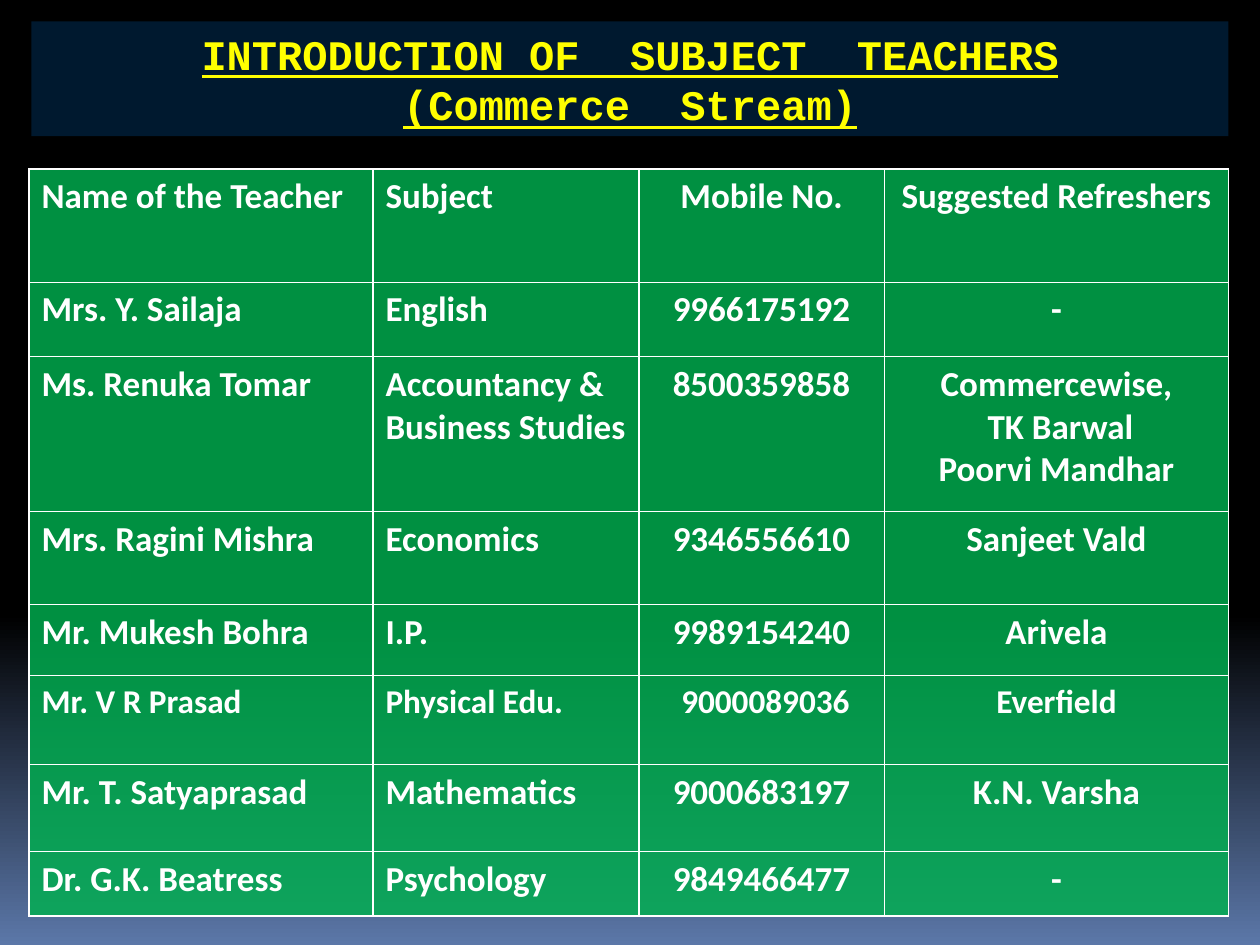
from dataclasses import dataclass

from lxml.etree import SubElement
from pptx import Presentation
from pptx.dml.color import RGBColor
from pptx.enum.shapes import MSO_SHAPE as Shape
from pptx.enum.text import MSO_ANCHOR as Anchor, PP_ALIGN as Align
from pptx.oxml.ns import qn
from pptx.util import Inches, Pt

WHITE = "FFFFFF"
YELLOW = "FFFF00"
NAVY = "00192F"
GREEN = "00B050"
GREEN_OPACITY = 82
COLUMN_WIDTHS = (2.73, 2.11, 1.95, 2.73)
COLUMN_ALIGNMENTS = (Align.LEFT, Align.LEFT, Align.CENTER, Align.CENTER)
TITLE = "INTRODUCTION OF  SUBJECT  TEACHERS\n(Commerce  Stream)"


@dataclass
class TeacherRow:
    height: float
    name: str
    subject: str
    mobile: str
    refreshers: str
    font_size: int = 20


ROWS = (
    TeacherRow(0.9, "Name of the Teacher", "Subject", "Mobile No.", "Suggested Refreshers"),
    TeacherRow(0.59, "Mrs. Y. Sailaja", "English", "9966175192", "-"),
    TeacherRow(1.23, "Ms. Renuka Tomar", "Accountancy & Business Studies", "8500359858",
               "Commercewise,\n TK Barwal\nPoorvi Mandhar"),
    TeacherRow(0.74, "Mrs. Ragini Mishra", "Economics", "9346556610", "Sanjeet Vald"),
    TeacherRow(0.56, "Mr. Mukesh Bohra", "I.P.", "9989154240", "Arivela"),
    TeacherRow(0.71, "Mr. V R Prasad", "Physical Edu.", " 9000089036", "Everfield", 19),
    TeacherRow(0.69, "Mr. T. Satyaprasad", "Mathematics", "9000683197", "K.N. Varsha"),
    TeacherRow(0.51, "Dr. G.K. Beatress", "Psychology", "9849466477", "-"),
)


def color(value: str) -> RGBColor:
    return RGBColor.from_string(value)


def write_text(text_frame, text: str, font_name: str, size: int, font_color: str,
               alignment, underline: bool = False) -> None:
    text_frame.text = text
    for paragraph in text_frame.paragraphs:
        paragraph.alignment = alignment
        font = paragraph.font
        font.name = font_name
        font.size = Pt(size)
        font.bold = True
        font.underline = underline
        font.color.rgb = color(font_color)


def paint_background(slide) -> None:
    fill = slide.background.fill
    fill.gradient()
    fill.gradient_angle = 270
    for stop, (position, value) in zip(fill.gradient_stops, ((0.65, "000000"), (1, "5B77A8"))):
        stop.position = position
        stop.color.rgb = color(value)


def add_title(slide) -> None:
    shape = slide.shapes.add_shape(Shape.RECTANGLE, Inches(0.25), Inches(0.17),
                                   Inches(9.5), Inches(0.91))
    shape.shadow.inherit = False
    shape.fill.solid()
    shape.fill.fore_color.rgb = color(NAVY)
    shape.line.fill.background()
    shape.text_frame.word_wrap = True
    shape.text_frame.vertical_anchor = Anchor.MIDDLE
    write_text(shape.text_frame, TITLE, "Courier New", 24, YELLOW, Align.CENTER, True)


def style_cell(cell) -> None:
    properties = cell._tc.get_or_add_tcPr()
    for side in ("lnL", "lnR", "lnT", "lnB"):
        border = SubElement(properties, qn(f"a:{side}"), w=str(Pt(1)))
        border_fill = SubElement(border, qn("a:solidFill"))
        SubElement(border_fill, qn("a:srgbClr"), val=WHITE)
    cell.fill.solid()
    cell.fill.fore_color.rgb = color(GREEN)
    green = properties.find(qn("a:solidFill")).find(qn("a:srgbClr"))
    SubElement(green, qn("a:alpha"), val=str(GREEN_OPACITY * 1000))


def add_teacher_table(slide) -> None:
    table = slide.shapes.add_table(
        len(ROWS), len(COLUMN_WIDTHS), Inches(0.23), Inches(1.34),
        Inches(sum(COLUMN_WIDTHS)), Inches(sum(row.height for row in ROWS))).table
    for column, width in zip(table.columns, COLUMN_WIDTHS):
        column.width = Inches(width)
    for table_row, row in zip(table.rows, ROWS):
        table_row.height = Inches(row.height)
        texts = (row.name, row.subject, row.mobile, row.refreshers)
        for cell, text, alignment in zip(table_row.cells, texts, COLUMN_ALIGNMENTS):
            style_cell(cell)
            write_text(cell.text_frame, text, "Calibri", row.font_size, WHITE, alignment)


def main() -> None:
    presentation = Presentation()
    presentation.slide_width = Inches(10)
    presentation.slide_height = Inches(7.5)
    slide = presentation.slides.add_slide(presentation.slide_layouts[6])
    paint_background(slide)
    add_title(slide)
    add_teacher_table(slide)
    presentation.save("out.pptx")


if __name__ == "__main__":
    main()
